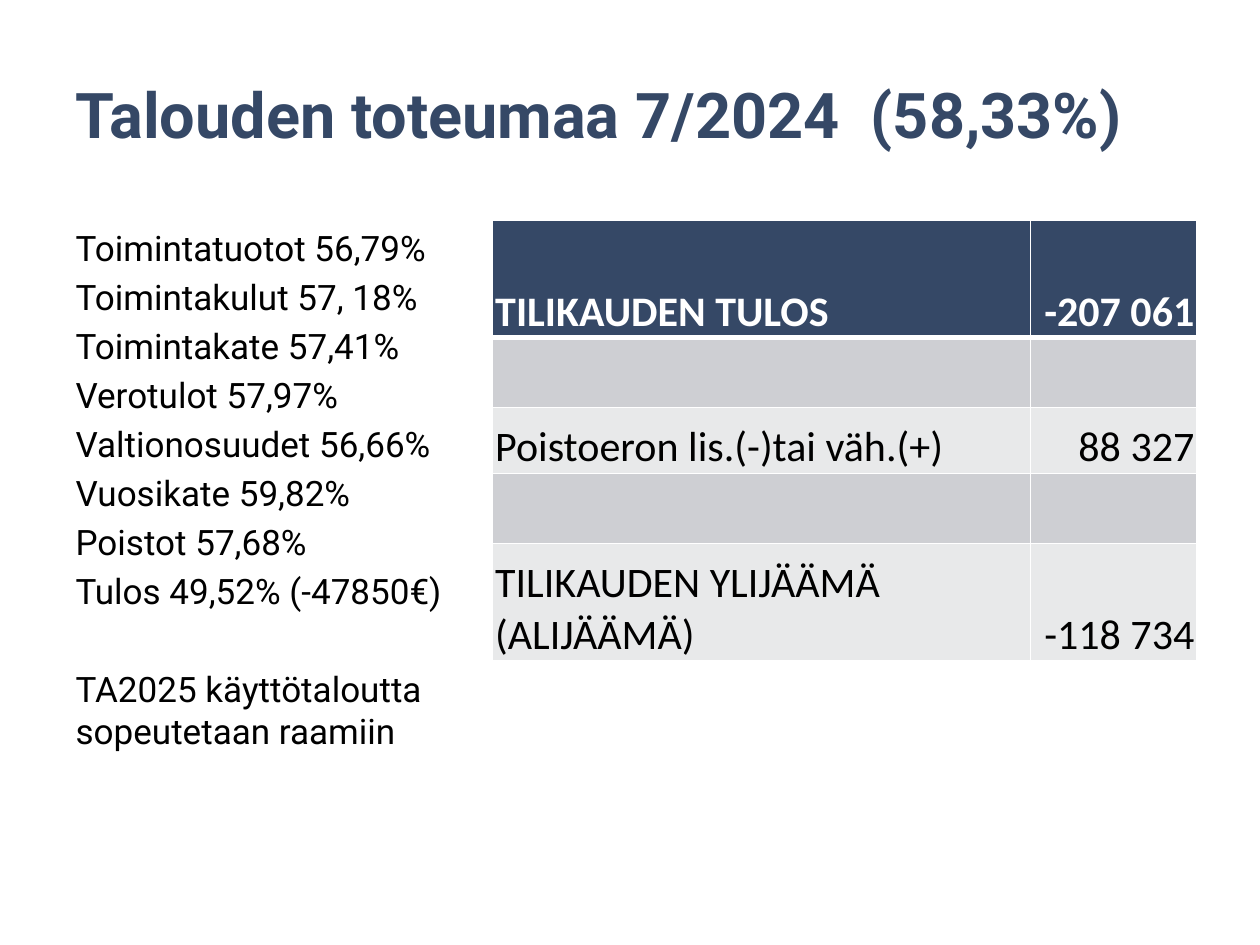
import pptx
import pptx.dml.color
import pptx.enum.text
import pptx.oxml
import pptx.oxml.ns
import pptx.util

Pt = pptx.util.Pt
RGBColor = pptx.dml.color.RGBColor
PP_ALIGN = pptx.enum.text.PP_ALIGN
MSO_ANCHOR = pptx.enum.text.MSO_ANCHOR

NAVY = RGBColor(0x35, 0x48, 0x66)
BLACK = RGBColor(0, 0, 0)
WHITE = RGBColor(0xFF, 0xFF, 0xFF)
DARK_BAND = RGBColor(0xCE, 0xCF, 0xD3)
LIGHT_BAND = RGBColor(0xE8, 0xE9, 0xEA)

TITLE = "Talouden toteumaa 7/2024  (58,33%)"
FIGURES = [
    "Toimintatuotot 56,79%",
    "Toimintakulut 57, 18%",
    "Toimintakate 57,41%",
    "Verotulot 57,97%",
    "Valtionosuudet 56,66%",
    "Vuosikate 59,82%",
    "Poistot 57,68%",
    "Tulos 49,52% (-47850€)",
]
CONCLUSION = "TA2025 käyttötaloutta sopeutetaan raamiin"
RESULT_ROWS = [
    ("TILIKAUDEN TULOS", "-207 061"),
    ("", ""),
    ("Poistoeron lis.(-)tai väh.(+)", "88 327"),
    ("", ""),
    ("TILIKAUDEN YLIJÄÄMÄ (ALIJÄÄMÄ)", "-118 734"),
]
COL_WIDTHS = [307.5, 95]
ROW_HEIGHTS = [67, 40, 37.5, 40, 67]
LEFT, TOP, TABLE_LEFT = 36, 126, 281.5

TITLE_FONT = {"name": "Roboto", "size": Pt(36), "bold": True}
BODY_FONT = {"name": "Roboto", "size": Pt(20), "bold": False}
HEADER_FONT = {"name": "Calibri", "size": Pt(24), "bold": True}
CELL_FONT = {"name": "Calibri", "size": Pt(24), "bold": False}
CELL_FORMAT = {
    "vertical_anchor": MSO_ANCHOR.BOTTOM,
    "margin_left": Pt(1.5), "margin_right": Pt(1.5),
    "margin_top": Pt(1.5), "margin_bottom": Pt(0),
}


def apply(obj, values):
    for name, value in values.items():
        setattr(obj, name, value)


def set_font(font, values, color):
    apply(font, values)
    font.color.rgb = color


def place(sp, left, top, width, height):
    apply(sp, {"left": Pt(left), "top": Pt(top),
               "width": Pt(width), "height": Pt(height)})
    apply(sp.text_frame, {"word_wrap": True,
                          "auto_size": pptx.enum.text.MSO_AUTO_SIZE.NONE})


def set_borders(cell, widths):
    tcPr = cell._tc.get_or_add_tcPr()
    for i, (side, width) in enumerate(widths.items()):
        ln = pptx.oxml.parse_xml(
            f'<a:ln{side} {pptx.oxml.ns.nsdecls("a")} w="{Pt(width)}">'
            f'<a:solidFill><a:srgbClr val="{WHITE}"/></a:solidFill></a:ln{side}>')
        tcPr.insert(i, ln)


def add_title(s):
    sp = s.shapes.title
    place(sp, LEFT, 21.5, 648, 91.5)
    tf = sp.text_frame
    apply(tf, {"vertical_anchor": MSO_ANCHOR.BOTTOM, "margin_bottom": Pt(26)})
    tf.text = TITLE
    p = tf.paragraphs[0]
    apply(p, {"alignment": PP_ALIGN.LEFT, "line_spacing": 0.9})
    set_font(p.runs[0].font, TITLE_FONT, NAVY)


def add_figures(s):
    sp = s.placeholders[1]
    place(sp, LEFT, TOP, 237, 356.5)
    tf = sp.text_frame
    lines = FIGURES + [CONCLUSION]
    tf.text = "\n".join(lines)
    for i, p in enumerate(tf.paragraphs):
        pPr = p._p.get_or_add_pPr()
        pPr.set("marL", "0")
        pPr.set("indent", "0")
        pPr.append(pptx.oxml.parse_xml(f'<a:buNone {pptx.oxml.ns.nsdecls("a")}/>'))
        p.space_before = Pt(0 if i == 0 else 32 if i == len(FIGURES) else 4)
        set_font(p.runs[0].font, BODY_FONT, BLACK)


def add_results(s):
    table = s.shapes.add_table(
        len(RESULT_ROWS), len(COL_WIDTHS), Pt(TABLE_LEFT), Pt(TOP),
        Pt(sum(COL_WIDTHS)), Pt(sum(ROW_HEIGHTS))).table
    for column, width in zip(table.columns, COL_WIDTHS):
        column.width = Pt(width)
    for i, (row, height) in enumerate(zip(table.rows, ROW_HEIGHTS)):
        row.height = Pt(height)
        header = i == 0
        fill = NAVY if header else DARK_BAND if i % 2 else LIGHT_BAND
        for j, (cell, text) in enumerate(zip(row.cells, RESULT_ROWS[i])):
            cell.fill.solid()
            cell.fill.fore_color.rgb = fill
            set_borders(cell, {"L": 1, "R": 1, "T": 3 if i == 1 else 1,
                               "B": 3 if header else 1})
            apply(cell, CELL_FORMAT)
            if text:
                cell.text = text
                p = cell.text_frame.paragraphs[0]
                p.alignment = PP_ALIGN.RIGHT if j else PP_ALIGN.LEFT
                set_font(p.runs[0].font, HEADER_FONT if header else CELL_FONT,
                         WHITE if header else BLACK)


def main():
    prs = pptx.Presentation()
    apply(prs, {"slide_width": Pt(720), "slide_height": Pt(540)})
    s = prs.slides.add_slide(prs.slide_layouts[1])
    add_title(s)
    add_figures(s)
    add_results(s)
    prs.save("out.pptx")


if __name__ == "__main__":
    main()
